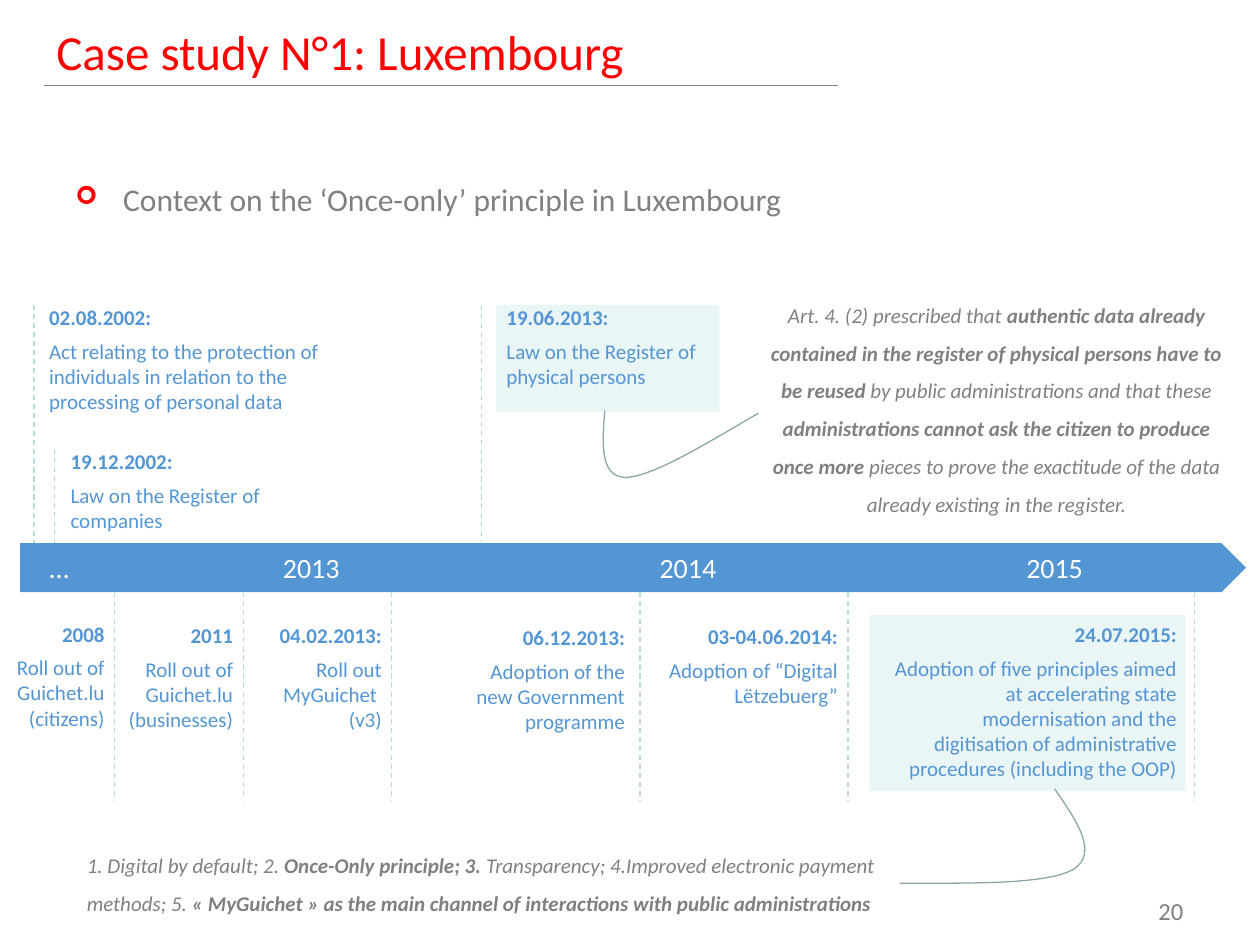
from lxml.etree import SubElement
from pptx import Presentation
from pptx.dml.color import RGBColor
from pptx.enum.dml import MSO_LINE
from pptx.enum.shapes import MSO_CONNECTOR, MSO_SHAPE
from pptx.enum.text import MSO_ANCHOR, PP_ALIGN
from pptx.oxml.ns import qn
from pptx.util import Inches, Pt

RED = RGBColor(0xFF, 0x00, 0x00)
GREY = RGBColor(0x80, 0x80, 0x80)
BLUE = RGBColor(0x54, 0x96, 0xD4)
WHITE = RGBColor(0xFF, 0xFF, 0xFF)
PALE = RGBColor(0xEA, 0xF5, 0xF6)
TEAL = RGBColor(0xB6, 0xDC, 0xDF)
SLATE = RGBColor(0x8A, 0xA6, 0xA8)
LEFT, CENTER, RIGHT = PP_ALIGN.LEFT, PP_ALIGN.CENTER, PP_ALIGN.RIGHT
TOP, MIDDLE, BOTTOM = MSO_ANCHOR.TOP, MSO_ANCHOR.MIDDLE, MSO_ANCHOR.BOTTOM

prs = Presentation()
prs.slide_width, prs.slide_height = Inches(10), Inches(7.5)
COL, ROW = prs.slide_width // 100, prs.slide_height // 75
s = prs.slides.add_slide(prs.slide_layouts[6])


def add_text(x, y, w, h, paragraphs, size, color, align=LEFT, anchor=TOP,
             insets=(1, 0.5, 1, 0.5), wrap=True, italic=False, spacing=None, after=0):
    box = s.shapes.add_textbox(round(x * COL), round(y * ROW), round(w * COL), round(h * ROW))
    tf = box.text_frame
    tf.word_wrap = wrap
    tf.vertical_anchor = anchor
    tf.margin_left, tf.margin_top, tf.margin_right, tf.margin_bottom = [round(i * COL) for i in insets]
    for i, runs in enumerate(paragraphs):
        p = tf.paragraphs[0] if i == 0 else tf.add_paragraph()
        p.alignment = align
        p.space_after = Pt(after)
        if spacing:
            p.line_spacing = spacing
        for text, bold in runs:
            r = p.add_run()
            r.text = text
            r.font.name = "Calibri"
            r.font.size = Pt(size)
            r.font.bold = bold
            r.font.italic = italic
            r.font.color.rgb = color
    return tf


def add_line(x1, y1, x2, y2, color, dash=None):
    ln = s.shapes.add_connector(MSO_CONNECTOR.STRAIGHT, round(x1 * COL), round(y1 * ROW),
                                round(x2 * COL), round(y2 * ROW))
    ln.line.color.rgb = color
    ln.line.width = Pt(0.75)
    ln.line.dash_style = dash
    SubElement(ln._element.spPr, qn("a:effectLst"))


add_line(3.5, 6.8, 66.5, 6.8, GREY)
add_text(3.5, 1.3, 63, 5.5, [[("Case study N°1: Luxembourg", False)]], 28, RED, anchor=MIDDLE)
add_text(87.8, 70.6, 7.1, 4, [[("20", False)]], 14, GREY, RIGHT)

tf = add_text(5, 13.8, 90, 6, [[("Context on the ‘Once-only’ principle in Luxembourg", False)]], 18, GREY)
pPr = tf.paragraphs[0]._p.get_or_add_pPr()
pPr.set("marL", str(round(3.8 * COL)))
pPr.set("indent", str(round(-3.8 * COL)))
SubElement(SubElement(pPr, qn("a:buClr")), qn("a:srgbClr"), val=str(RED))
SubElement(pPr, qn("a:buSzPct"), val="80000")
SubElement(pPr, qn("a:buFont"), typeface="Wingdings")
SubElement(pPr, qn("a:buChar"), char="➢")

for kind, x, y, w, h, fill in [
    (MSO_SHAPE.RECTANGLE, 39.4, 24.2, 17.7, 8.5, PALE),
    (MSO_SHAPE.RECTANGLE, 69, 48.8, 25.1, 14, PALE),
    (MSO_SHAPE.PENTAGON, 1.6, 43.1, 97.3, 3.9, BLUE),
]:
    sp = s.shapes.add_shape(kind, round(x * COL), round(y * ROW), round(w * COL), round(h * ROW))
    sp.shadow.inherit = False
    sp.fill.solid()
    sp.fill.fore_color.rgb = fill
    sp.line.fill.background()

for x, year in [(1.4, "…"), (21.4, "2013"), (51.3, "2014"), (80.4, "2015")]:
    add_text(x, 43.1, 6.6, 3.9, [[(year, False)]], 16, WHITE, CENTER, MIDDLE, (0, 0, 0, 0), False)

events = [
    (2.7, 24.2, 23.6, 10.8, LEFT, TOP, 2.7, "02.08.2002:",
     "Act relating to the protection of individuals in relation to the processing of personal data"),
    (4.4, 35.6, 19.7, 5.4, LEFT, TOP, 4.3, "19.12.2002:", "Law on the Register of companies"),
    (39, 24.2, 19.7, 10.8, LEFT, TOP, 38.2, "19.06.2013:", "Law on the Register of physical persons"),
    (-4.2, 49.3, 12.5, 10.2, RIGHT, TOP, 9.1, "2008", "Roll out of Guichet.lu (citizens)"),
    (6, 49.4, 12.5, 10.2, RIGHT, TOP, 19.3, "2011", "Roll out of Guichet.lu (businesses)"),
    (19.3, 49.4, 11, 10.2, RIGHT, TOP, 31.1, "04.02.2013:", "Roll out MyGuichet  (v3)"),
    (36, 49.6, 13.6, 10.2, RIGHT, TOP, 50.8, "06.12.2013:", "Adoption of the new Government programme"),
    (44.3, 49.5, 22.2, 11.4, RIGHT, TOP, 67.3, "03-04.06.2014:", "Adoption of “Digital Lëtzebuerg”"),
    (69.7, 51.2, 23.7, 10.8, RIGHT, BOTTOM, 94.8, "24.07.2015:",
     "Adoption of five principles aimed at accelerating state modernisation and the "
     "digitisation of administrative procedures (including the OOP)"),
]
for x, y, w, h, align, anchor, mark, date, event in events:
    start, end = (y, 43.1) if align == LEFT else (47, 63.6)
    add_line(mark, start, mark, end, TEAL, MSO_LINE.DASH)
    add_text(x, y, w, h, [[(date, True)], [(event, False)]], 12, BLUE, align, anchor,
             (1.2, 0, 0, 0), after=4.8)

add_text(59.4, 22.5, 39.4, 19.2, [[
    ("Art. 4. (2) prescribed that ", False),
    ("authentic data already contained in the register of physical persons have to be reused ", True),
    ("by public administrations and that these ", False),
    ("administrations cannot ask the citizen to produce once more ", True),
    ("pieces to prove the exactitude of the data already existing in the register.", False),
]], 12, GREY, CENTER, italic=True, spacing=1.5)
add_text(5.9, 66.2, 68.5, 6.8, [[
    ("1. Digital by default; 2. ", False),
    ("Once-Only principle; 3. ", True),
    ("Transparency; 4.Improved electronic payment methods; 5. ", False),
    ("« MyGuichet » as the main channel of interactions with public administrations", True),
]], 12, GREY, italic=True, spacing=1.5)

STEPS = 16
for curve in [
    [(48, 32.6), (47.8, 35.2), (47.6, 37.8), (49.6, 37.9), (51.7, 37.9), (55.9, 35.3), (60.2, 32.8)],
    [(83.7, 62.6), (85.5, 65.2), (87.2, 67.7), (85.2, 69), (83.1, 70.2), (77.3, 70.1), (71.4, 70.1)],
]:
    points = []
    for a, b, c, d in (curve[:4], curve[3:]):
        for t in [k / STEPS for k in range(1, STEPS + 1)]:
            weights = (1 - t) ** 3, 3 * t * (1 - t) ** 2, 3 * t * t * (1 - t), t ** 3
            x, y = [sum(k * v for k, v in zip(weights, axis)) for axis in zip(a, b, c, d)]
            points.append((round(x * COL), round(y * ROW)))
    fb = s.shapes.build_freeform(round(curve[0][0] * COL), round(curve[0][1] * ROW))
    fb.add_line_segments(points, close=False)
    sp = fb.convert_to_shape()
    sp.shadow.inherit = False
    sp.fill.background()
    sp.line.color.rgb = SLATE
    sp.line.width = Pt(0.75)

prs.save("out.pptx")
